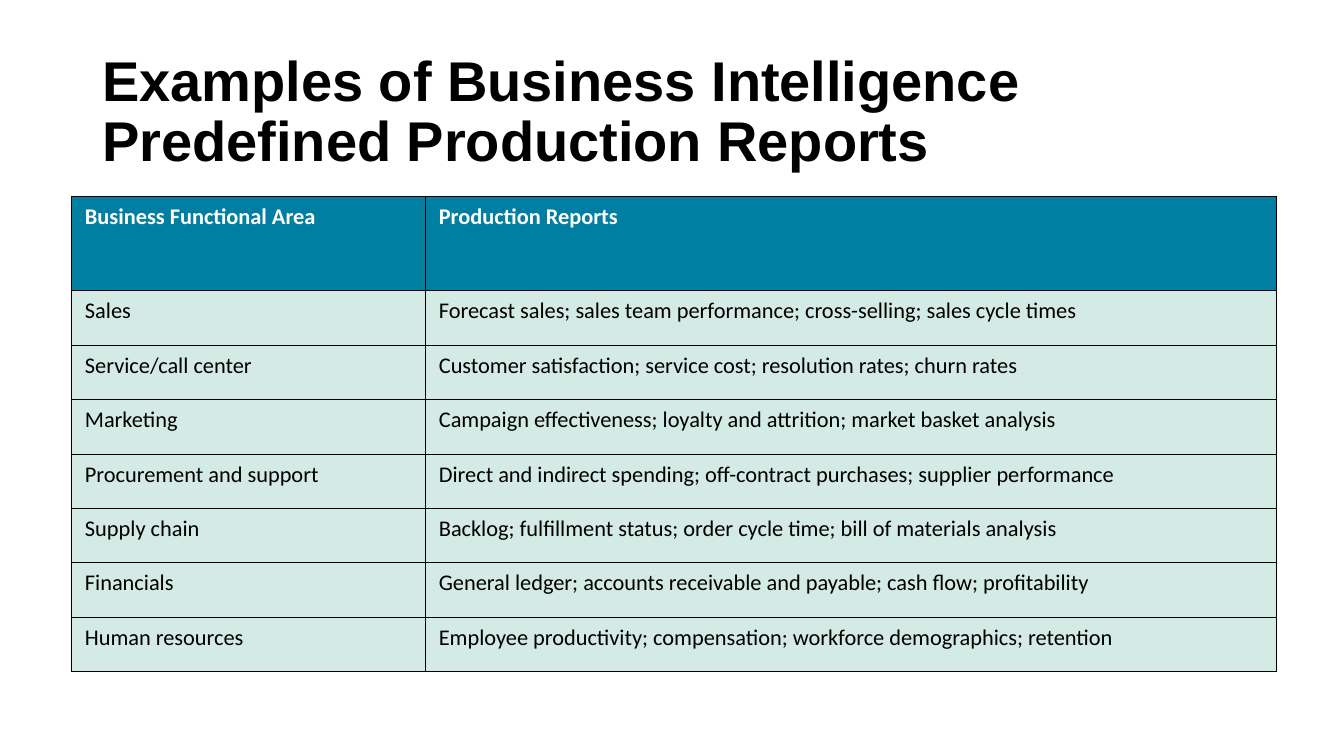
"""Build a slide with a table of predefined business intelligence reports."""

from dataclasses import dataclass

import lxml.etree
import pptx
import pptx.dml.color
import pptx.enum.text
import pptx.oxml.ns
import pptx.table
import pptx.text.text
import pptx.slide
import pptx.util

Pt = pptx.util.Pt


@dataclass(frozen=True)
class Theme:
    title_font: str = "Arial"
    table_font: str = "Calibri"
    title_size: float = 40
    table_size: float = 16
    black: str = "000000"
    white: str = "FFFFFF"
    header_fill: str = "007FA3"
    body_fill: str = "D4EAE4"
    border_width: float = 0.75


@dataclass(frozen=True)
class ReportRow:
    area: str
    reports: str
    is_header: bool = False


THEME = Theme()
TITLE = "Examples of Business Intelligence Predefined Production Reports"
COLUMN_WIDTHS = (252.8, 608)
HEADER_HEIGHT = 67.2
BODY_HEIGHT = 38.9
ROWS = (
    ReportRow("Business Functional Area", "Production Reports", True),
    ReportRow("Sales", "Forecast sales; sales team performance; cross-selling; sales cycle times"),
    ReportRow("Service/call center", "Customer satisfaction; service cost; resolution rates; churn rates"),
    ReportRow("Marketing", "Campaign effectiveness; loyalty and attrition; market basket analysis"),
    ReportRow("Procurement and support", "Direct and indirect spending; off-contract purchases; supplier performance"),
    ReportRow("Supply chain", "Backlog; fulfillment status; order cycle time; bill of materials analysis"),
    ReportRow("Financials", "General ledger; accounts receivable and payable; cash flow; profitability"),
    ReportRow("Human resources", "Employee productivity; compensation; workforce demographics; retention"),
)


def rgb(color: str) -> pptx.dml.color.RGBColor:
    return pptx.dml.color.RGBColor.from_string(color)


def format_runs(paragraph: pptx.text.text._Paragraph, name: str, size: float, color: str, bold: bool) -> None:
    for run in paragraph.runs:
        run.font.name = name
        run.font.size = Pt(size)
        run.font.bold = bold
        run.font.color.rgb = rgb(color)


def add_title(slide: pptx.slide.Slide) -> None:
    shape = slide.shapes.add_textbox(Pt(66), Pt(28.75), Pt(828), Pt(104.4))
    text_frame = shape.text_frame
    text_frame.word_wrap = True
    text_frame.vertical_anchor = pptx.enum.text.MSO_ANCHOR.MIDDLE
    text_frame.text = TITLE
    paragraph = text_frame.paragraphs[0]
    paragraph.line_spacing = 0.9
    format_runs(paragraph, THEME.title_font, THEME.title_size, THEME.black, True)


def add_borders(cell: pptx.table._Cell) -> None:
    qn = pptx.oxml.ns.qn
    properties = cell._tc.get_or_add_tcPr()
    for edge in ("a:lnL", "a:lnR", "a:lnT", "a:lnB"):
        line = lxml.etree.SubElement(properties, qn(edge), w=str(Pt(THEME.border_width)))
        fill = lxml.etree.SubElement(line, qn("a:solidFill"))
        lxml.etree.SubElement(fill, qn("a:srgbClr"), val=THEME.black)


def fill_cell(cell: pptx.table._Cell, text: str, is_header: bool) -> None:
    cell.margin_left = cell.margin_right = Pt(9.6)
    cell.margin_top = cell.margin_bottom = Pt(4.8)
    add_borders(cell)
    cell.fill.solid()
    cell.fill.fore_color.rgb = rgb(THEME.header_fill if is_header else THEME.body_fill)
    cell.text_frame.text = text
    color = THEME.white if is_header else THEME.black
    format_runs(cell.text_frame.paragraphs[0], THEME.table_font, THEME.table_size, color, is_header)


def add_report_table(slide: pptx.slide.Slide) -> None:
    heights = [HEADER_HEIGHT if row.is_header else BODY_HEIGHT for row in ROWS]
    shape = slide.shapes.add_table(
        len(ROWS), len(COLUMN_WIDTHS), Pt(51.1), Pt(140.4), Pt(sum(COLUMN_WIDTHS)), Pt(sum(heights))
    )
    table = shape.table
    table.horz_banding = False
    for column, width in zip(table.columns, COLUMN_WIDTHS):
        column.width = Pt(width)
    for index, (row, height) in enumerate(zip(ROWS, heights)):
        table.rows[index].height = Pt(height)
        for cell, text in zip(table.rows[index].cells, (row.area, row.reports)):
            fill_cell(cell, text, row.is_header)


def main() -> None:
    presentation = pptx.Presentation()
    presentation.slide_width = Pt(960)
    presentation.slide_height = Pt(540)
    slide = presentation.slides.add_slide(presentation.slide_layouts[6])
    add_title(slide)
    add_report_table(slide)
    presentation.save("out.pptx")


if __name__ == "__main__":
    main()
